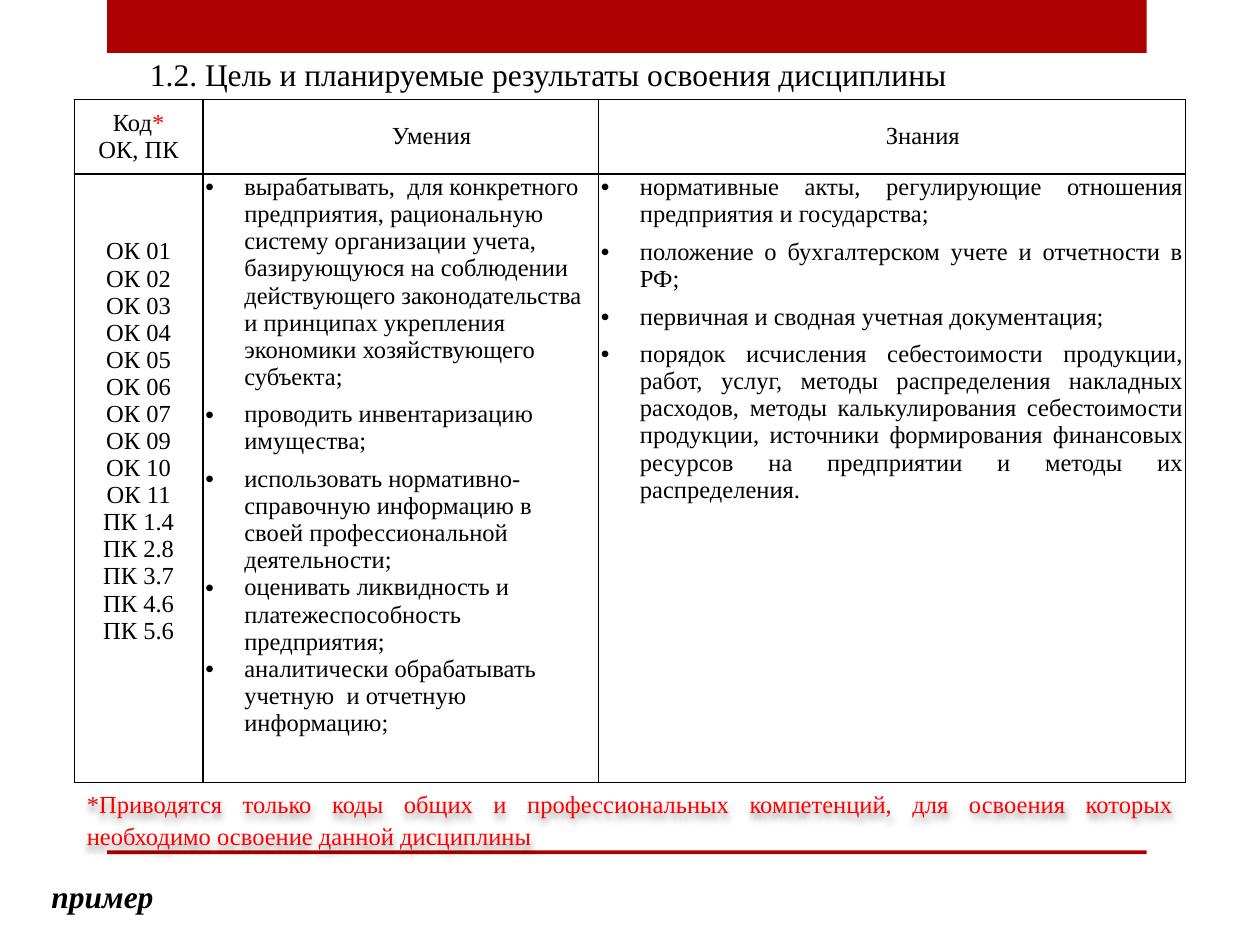
from dataclasses import dataclass

import pptx
import pptx.dml.color
import pptx.enum.shapes
import pptx.enum.text
import pptx.oxml
import pptx.oxml.ns
import pptx.util
from pptx.util import Inches

ALIGN = pptx.enum.text.PP_ALIGN
ANCHOR = pptx.enum.text.MSO_ANCHOR


@dataclass(frozen=True)
class Theme:
    font: str = "Times New Roman"
    text: str = "000000"
    accent: str = "FF0000"
    band: str = "AD0101"
    heading_size: int = 18
    body_size: int = 14
    border_width: int = 1


@dataclass(frozen=True)
class Run:
    text: str
    color: str = Theme.text
    size: int = Theme.body_size
    emphasis: bool = False


@dataclass(frozen=True)
class Paragraph:
    runs: tuple[Run, ...]
    align: ALIGN = ALIGN.LEFT
    margin: float = 0
    indent: float = 0
    space_after: int = 0
    bullet: bool = False
    line_spacing: float = 1.0


@dataclass(frozen=True)
class Cell:
    paragraphs: list[Paragraph]
    anchor: ANCHOR = ANCHOR.TOP
    margin_top: float = 0


THEME = Theme()
BANDS = [(0, 0.42), (6.75, 0.03)]
COLUMN_WIDTHS = [1.02, 3.14, 4.66]
ROW_HEIGHTS = [0.59, 4.83]
CODES = [f"ОК {number:02}" for number in (*range(1, 8), 9, 10, 11)] + [
    "ПК 1.4", "ПК 2.8", "ПК 3.7", "ПК 4.6", "ПК 5.6"]
SKILLS = [
    ("вырабатывать,  для конкретного предприятия, рациональную систему организации "
     "учета, базирующуюся на соблюдении действующего законодательства и принципах "
     "укрепления экономики хозяйствующего субъекта;", 6),
    ("проводить инвентаризацию имущества;", 6),
    ("использовать нормативно- справочную информацию в своей профессиональной "
     "деятельности;", 0),
    ("оценивать ликвидность и платежеспособность предприятия;", 0),
    ("аналитически обрабатывать учетную  и отчетную информацию;", 0),
]
KNOWLEDGE = [
    ("нормативные акты, регулирующие отношения предприятия и государства;", 6),
    ("положение о бухгалтерском учете и отчетности в РФ;", 6),
    ("первичная и сводная учетная документация;", 6),
    ("порядок исчисления себестоимости продукции, работ, услуг, методы распределения "
     "накладных расходов, методы калькулирования себестоимости продукции, источники "
     "формирования финансовых ресурсов на предприятии и методы их распределения.", 6),
]


def color(value: str) -> pptx.dml.color.RGBColor:
    return pptx.dml.color.RGBColor.from_string(value)


def set_attributes(target, values: dict) -> None:
    for name, value in values.items():
        setattr(target, name, value)


def add_xml(parent, body: str) -> None:
    """Append one DrawingML element, given without its namespace declaration."""
    tag, rest = body[1:].split(" ", 1)
    namespace = pptx.oxml.ns.nsdecls("a")
    parent.append(pptx.oxml.parse_xml(f"<{tag} {namespace} {rest}"))


def write_text(text_frame, paragraphs: list[Paragraph]) -> None:
    for index, content in enumerate(paragraphs):
        paragraph = text_frame.add_paragraph() if index else text_frame.paragraphs[0]
        properties = paragraph._p.get_or_add_pPr()
        properties.set("marL", str(Inches(content.margin)))
        properties.set("indent", str(Inches(content.indent)))
        if content.bullet:
            add_xml(properties, '<a:buFont typeface="Arial"/>')
            add_xml(properties, '<a:buChar char="•"/>')
        set_attributes(paragraph, {
            "alignment": content.align,
            "space_before": pptx.util.Pt(0),
            "space_after": pptx.util.Pt(content.space_after),
            "line_spacing": content.line_spacing,
        })
        for part in content.runs:
            run = paragraph.add_run()
            run.text = part.text
            set_attributes(run.font, {
                "name": THEME.font,
                "size": pptx.util.Pt(part.size),
                "bold": part.emphasis,
                "italic": part.emphasis,
            })
            run.font.color.rgb = color(part.color)


def add_band(slide, top: float, height: float) -> None:
    band = slide.shapes.add_shape(pptx.enum.shapes.MSO_SHAPE.RECTANGLE, Inches(0.85),
                                  Inches(top), Inches(8.25), Inches(height))
    band.shadow.inherit = False
    band.fill.solid()
    band.fill.fore_color.rgb = color(THEME.band)
    band.line.fill.background()


def add_title(slide, text: str) -> None:
    title = slide.shapes.title
    set_attributes(title, {"left": Inches(0.59), "top": Inches(0.39),
                           "width": Inches(7.32), "height": Inches(0.4)})
    set_attributes(title.text_frame, {"word_wrap": True, "vertical_anchor": ANCHOR.TOP,
                                      "auto_size": pptx.enum.text.MSO_AUTO_SIZE.NONE})
    run = Run(text, size=THEME.heading_size)
    write_text(title.text_frame, [Paragraph((run,), ALIGN.JUSTIFY, margin=0.5)])


def add_text(slide, position: tuple[float, ...], paragraph: Paragraph, wrap: bool):
    box = slide.shapes.add_textbox(*map(Inches, position))
    box.text_frame.word_wrap = wrap
    write_text(box.text_frame, [paragraph])
    return box


def fill_cell(cell, content: Cell) -> None:
    for side in ("lnL", "lnR", "lnT", "lnB"):
        add_xml(cell._tc.get_or_add_tcPr(),
                f'<a:{side} w="{pptx.util.Pt(THEME.border_width)}"><a:solidFill>'
                f'<a:srgbClr val="{THEME.text}"/></a:solidFill></a:{side}>')
    cell.fill.background()
    set_attributes(cell, {"margin_left": Inches(0.02), "margin_right": Inches(0.02),
                          "margin_top": Inches(content.margin_top), "margin_bottom": 0,
                          "vertical_anchor": content.anchor})
    write_text(cell.text_frame, content.paragraphs)


def add_competence_table(slide, rows: list[list[Cell]]) -> None:
    frame = slide.shapes.add_table(
        len(rows), len(COLUMN_WIDTHS), Inches(0.59), Inches(0.79),
        Inches(sum(COLUMN_WIDTHS)), Inches(sum(ROW_HEIGHTS)))
    table = frame.table
    set_attributes(table, {"first_row": False, "horz_banding": False})
    for column, width in zip(table.columns, COLUMN_WIDTHS):
        column.width = Inches(width)
    for row, height, contents in zip(table.rows, ROW_HEIGHTS, rows):
        row.height = Inches(height)
        for cell, content in zip(row.cells, contents):
            fill_cell(cell, content)


def bullet_cell(items: list[tuple[str, int]], align: ALIGN) -> Cell:
    return Cell([Paragraph((Run(text),), align, 0.31, -0.31, space, bullet=True)
                 for text, space in items])


def header_cell(text: str) -> Cell:
    return Cell([Paragraph((Run(text),), ALIGN.CENTER, indent=0.49)], ANCHOR.MIDDLE)


def main() -> None:
    presentation = pptx.Presentation()
    set_attributes(presentation, {"slide_width": Inches(10), "slide_height": Inches(7.5)})
    slide = presentation.slides.add_slide(presentation.slide_layouts[5])
    for top, height in BANDS:
        add_band(slide, top, height)
    add_title(slide, "1.2. Цель и планируемые результаты освоения дисциплины")

    code_header = Cell([Paragraph((Run("Код"), Run("*", THEME.accent)), ALIGN.CENTER),
                        Paragraph((Run("ОК, ПК"),), ALIGN.CENTER)], ANCHOR.MIDDLE)
    codes = Cell([Paragraph((Run(code),), ALIGN.CENTER) for code in CODES], margin_top=0.51)
    add_competence_table(slide, [
        [code_header, header_cell("Умения"), header_cell("Знания")],
        [codes, bullet_cell(SKILLS, ALIGN.LEFT), bullet_cell(KNOWLEDGE, ALIGN.JUSTIFY)],
    ])

    example = Run("пример", size=THEME.heading_size, emphasis=True)
    add_text(slide, (0.31, 6.91, 1.02, 0.4), Paragraph((example,)), wrap=False)
    footnote = Run("*Приводятся только коды общих и профессиональных компетенций, для "
                   "освоения которых необходимо освоение данной дисциплины", THEME.accent)
    note = add_text(slide, (0.59, 6.19, 8.82, 0.59),
                    Paragraph((footnote,), ALIGN.JUSTIFY, line_spacing=1.1), wrap=True)
    add_xml(note._element.spPr,
            '<a:effectLst ><a:outerShdw blurRad="50800" dist="38100" dir="5400000">'
            '<a:srgbClr val="000000"><a:alpha val="40000"/></a:srgbClr>'
            '</a:outerShdw></a:effectLst>')
    presentation.save("out.pptx")


if __name__ == "__main__":
    main()
